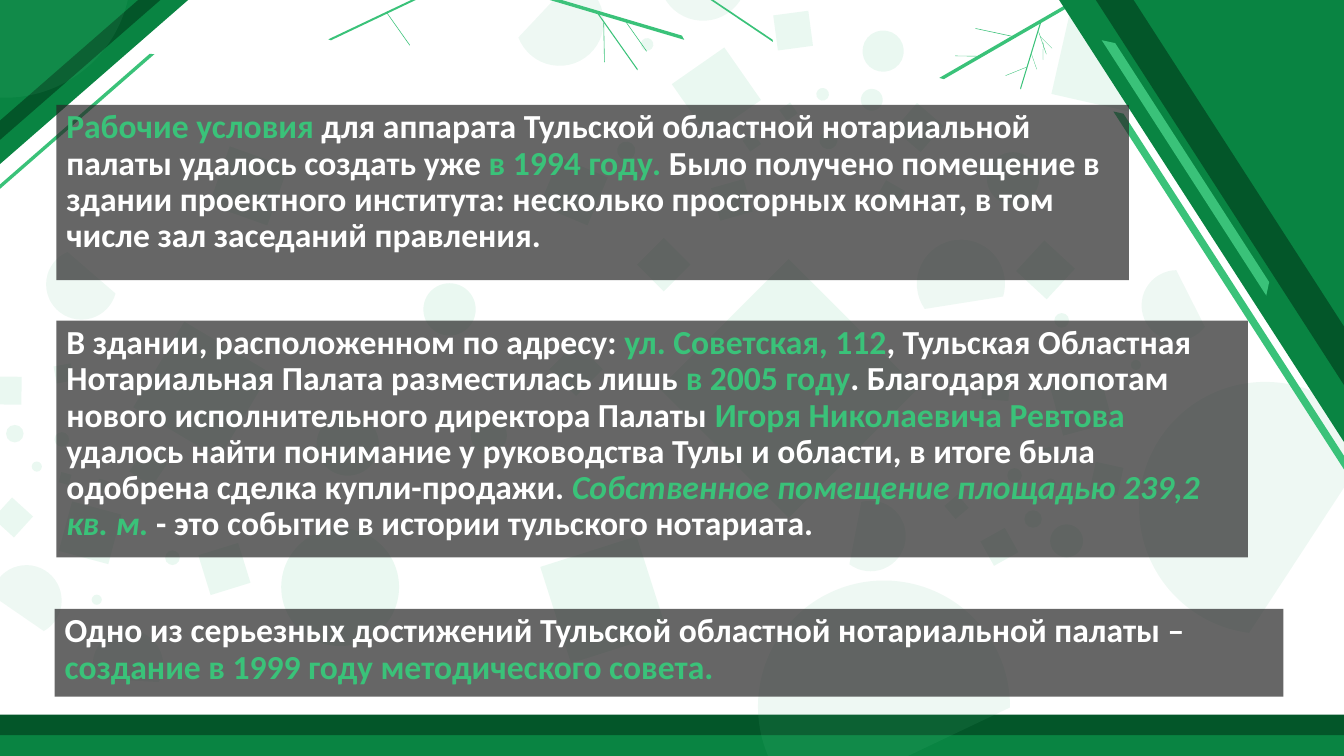
import math

import pptx
import pptx.dml.color
import pptx.enum.shapes
import pptx.enum.text
import pptx.oxml
import pptx.oxml.ns
import pptx.util

Pt = pptx.util.Pt
RGBColor = pptx.dml.color.RGBColor
MSO = pptx.enum.shapes.MSO_SHAPE

GREEN = RGBColor(0x09, 0x84, 0x42)
DARK_GREEN = RGBColor(0x03, 0x56, 0x29)
LIGHT_GREEN = RGBColor(0x3A, 0xC2, 0x79)
PALE_GREEN = RGBColor(0x5E, 0xC2, 0x8C)
PANEL_GREY = RGBColor(0x26, 0x26, 0x26)
WHITE = RGBColor(0xFF, 0xFF, 0xFF)

SLIDE_W, SLIDE_H = 960, 540
THIN = 0.971  # stripe adjustment: the closer to 1, the thinner

# Confetti pieces: kind, centre offset from the first piece, size, rotation
CONFETTI = {
    "first diamond": (MSO.DIAMOND, 0, 0, 100.8, 75.8),
    "low chord": (MSO.CHORD, 487.4, 226.1, 180, 83.7),
    "inner diamond": (MSO.DIAMOND, 267.5, -14.8, 38.2, 90),
    "large disc": (MSO.OVAL, 99, 140.8, 84.2, 0),
    "right chord": (MSO.CHORD, 759.6, 84.2, 180, 52.3),
    "top chord": (MSO.CHORD, -140.4, -298.8, 180, 270),
    "upper diamond": (MSO.DIAMOND, 349.7, -212.3, 97.7, 19.2),
    "low diamond": (MSO.DIAMOND, 287.3, 149.8, 102.2, 27.3),
    "large diamond": (MSO.DIAMOND, 419.4, -1.1, 185, 0),
    "far diamond": (MSO.DIAMOND, 670.7, -251.6, 150.5, 327.8),
    "left diamond": (MSO.DIAMOND, 33.5, -145.8, 62.6, 64.6),
    "left disc": (MSO.OVAL, 104.4, 38.9, 44.6, 0),
    "far disc": (MSO.OVAL, 579.6, -151.2, 37.4, 0),
    "small disc": (MSO.OVAL, 205.2, 32.4, 25.9, 0),
    "middle diamond": (MSO.DIAMOND, 330.1, -89.6, 38.2, 90),
    "middle disc": (MSO.OVAL, 177.1, -57.6, 37.4, 0),
    "right disc": (MSO.OVAL, 575.9, 69.7, 25.9, 0),
}

# Twigs along the top edge: left, top, size, rotation
TWIGS = [
    (351.4, -53.3, 116.6, 61.5), (490.3, -20.9, 56.9, 78.9),
    (244.1, -27.4, 69.1, 199.6), (422.6, 11.5, 36, 99.8),
    (443.5, 15.1, 20.2, 99.8), (274.3, 10.8, 20.2, 99.8),
    (421.2, 20.2, 20.2, 133.9), (718.6, 21.6, 36, 331.9),
    (684.7, 33.8, 12.2, 225.7), (700.6, 13, 20.2, 237.1),
    (720, 44.6, 12.2, 203), (738.7, 24.5, 12.2, 295.9),
    (734.4, 39.6, 8.6, 295.9), (740.9, 32.4, 8.6, 315.7),
    (743, 25.9, 8.6, 270), (684, -43.9, 116.6, 195),
]

# Panels: box and runs (text, colour, italic)
PANELS = [
    ((40.3, 74.9, 766.1, 125.3), [
        ("Рабочие условия ", LIGHT_GREEN, False),
        ("для аппарата Тульской областной нотариальной палаты удалось "
         "создать уже ", WHITE, False),
        ("в 1994 году. ", LIGHT_GREEN, False),
        ("Было получено помещение в здании проектного института: несколько "
         "просторных комнат, в том числе зал заседаний правления.",
         WHITE, False),
    ]),
    ((40.3, 229, 851, 169.2), [
        ("В здании, расположенном по адресу: ", WHITE, False),
        ("ул. Советская, 112", LIGHT_GREEN, False),
        (", Тульская Областная Нотариальная Палата разместилась лишь ",
         WHITE, False),
        ("в 2005 году", LIGHT_GREEN, False),
        (". Благодаря хлопотам нового исполнительного директора Палаты ",
         WHITE, False),
        ("Игоря Николаевича Ревтова ", LIGHT_GREEN, False),
        ("удалось найти понимание у руководства Тулы и области, в итоге была "
         "одобрена сделка купли-продажи. ", WHITE, False),
        ("Собственное помещение площадью 239,2 кв. м. ", LIGHT_GREEN, True),
        ("- это событие в истории тульского нотариата.", WHITE, False),
    ]),
    ((39, 435, 877.7, 62.6), [
        ("Одно из серьезных достижений Тульской областной нотариальной "
         "палаты – ", WHITE, False),
        ("создание в 1999 году методического совета.", LIGHT_GREEN, False),
    ]),
]


def add_shape(s, kind, box, color, rotation=0, opacity=None):
    """Add a plain filled shape; opacity is a percentage."""
    sp = s.shapes.add_shape(kind, *(Pt(v) for v in box))
    sp.shadow.inherit = False
    sp.fill.solid()
    sp.fill.fore_color.rgb = color
    sp.line.fill.background()
    sp.rotation = rotation % 360
    if opacity is not None:
        clr = sp.element.spPr.find(".//" + pptx.oxml.ns.qn("a:srgbClr"))
        alpha = pptx.oxml.parse_xml(
            "<a:alpha %s val='%d'/>" % (pptx.oxml.ns.nsdecls("a"), opacity * 1000))
        clr.append(alpha)
    return sp


def add_stripe(s, left, top, size, rotation, color=LIGHT_GREEN, cut=THIN):
    sp = add_shape(s, MSO.DIAGONAL_STRIPE, (left, top, size, size), color, rotation)
    sp.adjustments[0] = cut


def add_footer(s, left, top, width, height):
    half = height / 2
    add_shape(s, MSO.RECTANGLE, (left, top + half, width, half), GREEN)
    add_shape(s, MSO.RECTANGLE, (left, top, width, half), DARK_GREEN)


def add_left_corner(s, left, top, size):
    add_stripe(s, left - 0.7, top + 44, 116.6, 3.9)
    add_shape(s, MSO.RIGHT_TRIANGLE, (left, top, size, size), GREEN, 93.9)
    add_stripe(s, left - 5, top - 12.9, size, 3.9, DARK_GREEN, 0.898)


def add_right_corner(s, left, top, size):
    add_shape(s, MSO.RIGHT_TRIANGLE, (left, top, size, size), GREEN, 192.2)
    add_stripe(s, left + 20.2, top - 9.3, size, 102.2, DARK_GREEN, 0.898)
    add_stripe(s, left + 80, top + 127.5, 254.9, 102.2)
    add_stripe(s, left + 83.6, top + 67, 153.4, 102.2, cut=0.936)


def add_confetti(s, x, y, scale, turn, skip=()):
    """Scatter the pieces around (x, y), scaled and turned as one cluster."""
    cos, sin = math.cos(math.radians(turn)), math.sin(math.radians(turn))
    for name, (kind, dx, dy, size, rotation) in CONFETTI.items():
        if name in skip:
            continue
        d = size * scale
        cx = x + scale * (dx * cos - dy * sin)
        cy = y + scale * (dx * sin + dy * cos)
        color = PALE_GREEN if kind == MSO.CHORD else LIGHT_GREEN
        sp = add_shape(s, kind, (cx - d / 2, cy - d / 2, d, d), color,
                       rotation + turn, 10)
        if kind == MSO.CHORD:
            sp.adjustments[1] = 166.04


def add_panel(s, box, runs):
    sp = add_shape(s, MSO.RECTANGLE, box, PANEL_GREY, opacity=70)
    tf = sp.text_frame
    tf.word_wrap = True
    tf.vertical_anchor = pptx.enum.text.MSO_ANCHOR.TOP
    p = tf.paragraphs[0]
    p.alignment = pptx.enum.text.PP_ALIGN.LEFT
    p.line_spacing = 0.9
    for text, color, italic in runs:
        r = p.add_run()
        r.text = text
        r.font.name = "Calibri"
        r.font.size = Pt(24)
        r.font.bold = True
        r.font.italic = italic
        r.font.color.rgb = color


def main():
    prs = pptx.Presentation()
    prs.slide_width, prs.slide_height = Pt(SLIDE_W), Pt(SLIDE_H)
    s = prs.slides.add_slide(prs.slide_layouts[6])
    add_footer(s, 0, SLIDE_H - 29.6, SLIDE_W, 29.6)
    add_left_corner(s, -9.4, -9.4, 144)
    for twig in TWIGS:
        add_stripe(s, *twig)
    add_confetti(s, 656.3, 91.1, 0.35, 190.1)
    add_confetti(s, 144, 278.6, 1, 0, ("upper diamond", "right disc"))
    add_confetti(s, 5.4, 279, 0.28, 60, ("large disc",))
    add_confetti(s, 713.9, 390.6, 0.28, -60, ("low chord",))
    add_right_corner(s, 685.4, -23.8, 313.9)
    for box, runs in PANELS:
        add_panel(s, box, runs)
    prs.save("out.pptx")


if __name__ == "__main__":
    main()
